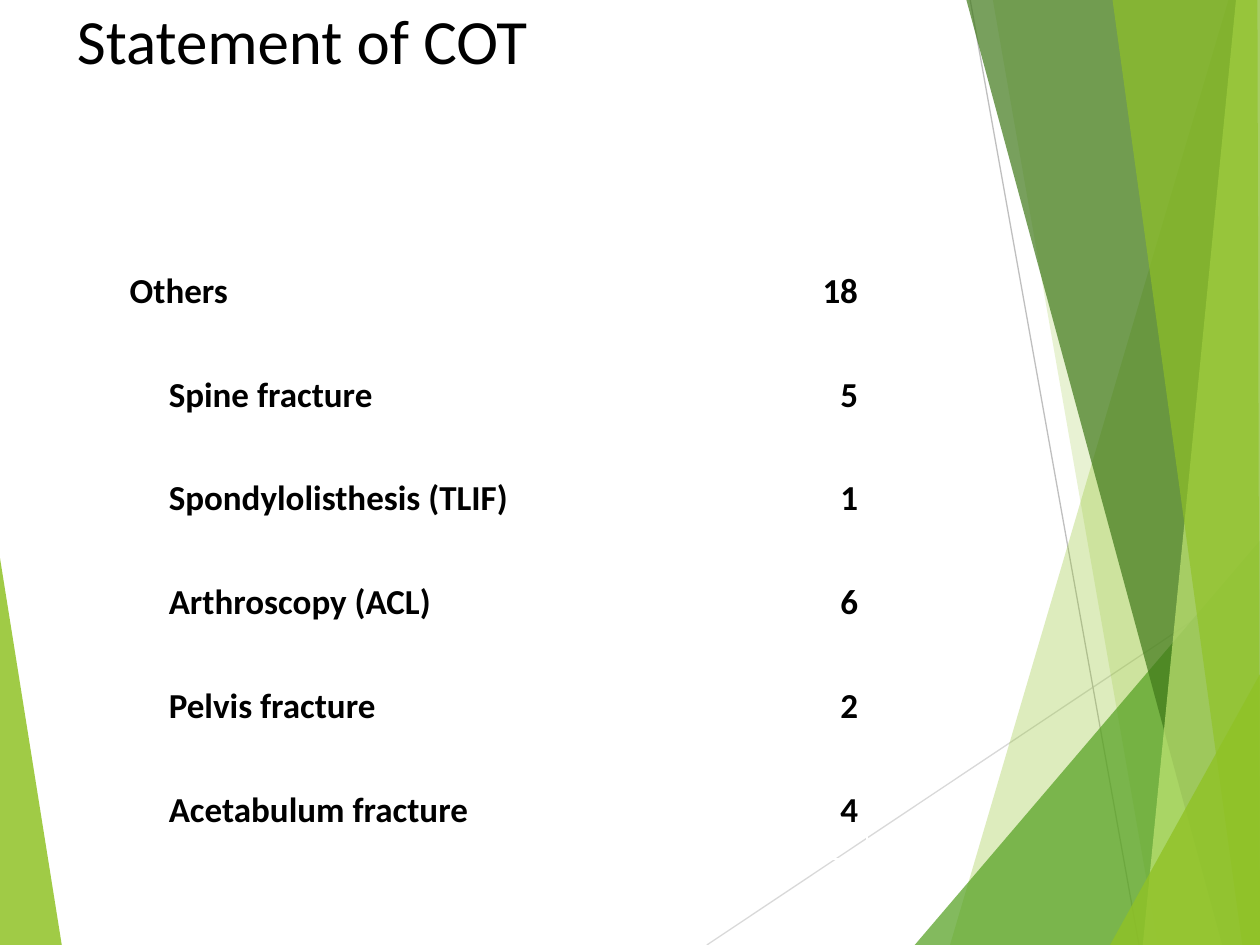
from dataclasses import dataclass

from lxml.etree import SubElement
from pptx import Presentation
from pptx.dml.color import RGBColor
from pptx.enum.shapes import MSO_CONNECTOR
from pptx.enum.text import MSO_ANCHOR, PP_ALIGN
from pptx.oxml import parse_xml
from pptx.oxml.ns import nsdecls, qn
from pptx.util import Inches, Pt


@dataclass(frozen=True)
class Theme:
    font: str = "Calibri"
    ink: str = "000000"
    rule: str = "FFFFFF"
    lime: str = "90C226"
    leaf: str = "54A021"
    moss: str = "3F7819"
    pale: str = "C0E474"
    light: str = "D9D9D9"
    grey: str = "BFBFBF"
    head: int = 36
    body: int = 20


THEME = Theme()
WIDE, HIGH = 10, 7.5

# Corner points, colour and opacity of each facet, from back to front
FACETS = [
    ([(0, 4.43), (0.49, HIGH), (0, HIGH)], THEME.lime, 85),
    ([(9.75, 0), (7.54, HIGH), (WIDE, HIGH), (WIDE, 0)], THEME.lime, 30),
    ([(7.88, 0), (9.19, HIGH), (WIDE, HIGH), (WIDE, 0)], THEME.lime, 20),
    ([(7.26, HIGH), (WIDE, 4.29), (WIDE, HIGH)], THEME.leaf, 72),
    ([(7.67, 0), (9.7, HIGH), (WIDE, HIGH), (WIDE, 0)], THEME.moss, 70),
    ([(9.81, 0), (9.07, HIGH), (WIDE, HIGH), (WIDE, 0)], THEME.pale, 70),
    ([(8.83, 0), (9.86, HIGH), (WIDE, HIGH), (9.98, 0)], THEME.lime, 65),
    ([(8.81, HIGH), (WIDE, 5.35), (WIDE, HIGH)], THEME.lime, 80),
]
RAYS = [
    ((5.61, HIGH), (WIDE, 4.57), THEME.light),
    ((7.7, 0), (9.04, HIGH), THEME.grey),
]
CASES = [
    ("Others", 18),
    ("Spine fracture", 5),
    ("Spondylolisthesis (TLIF)", 1),
    ("Arthroscopy (ACL)", 6),
    ("Pelvis fracture", 2),
    ("Acetabulum fracture", 4),
]


def style(para, size, bold=False):
    for run in para.runs:
        run.font.name = THEME.font
        run.font.size = Pt(size)
        run.font.bold = bold
        run.font.color.rgb = RGBColor.from_string(THEME.ink)


def add_facet(slide, left, top, points, color, alpha):
    spots = [(left + Inches(x), top + Inches(y)) for x, y in points]
    path = slide.shapes.build_freeform(*spots[0])
    path.add_line_segments(spots[1:], close=True)
    shape = path.convert_to_shape()
    shape.shadow.inherit = False
    shape.line.fill.background()
    shape.fill.solid()
    shape.fill.fore_color.rgb = RGBColor.from_string(color)
    tint = shape._element.spPr.find(qn("a:solidFill"))[0]
    SubElement(tint, qn("a:alpha")).set("val", str(alpha * 1000))


def add_ray(slide, left, top, start, end, color):
    ray = slide.shapes.add_connector(
        MSO_CONNECTOR.STRAIGHT,
        left + Inches(start[0]), top + Inches(start[1]),
        left + Inches(end[0]), top + Inches(end[1]))
    ray.line.color.rgb = RGBColor.from_string(color)
    ray.line.width = Pt(0.75)
    SubElement(ray._element.spPr, qn("a:effectLst"))


def add_decor(slide, left, top):
    # The left wedge lies under the rays, the others above
    add_facet(slide, left, top, *FACETS[0])
    for ray in RAYS:
        add_ray(slide, left, top, *ray)
    for facet in FACETS[1:]:
        add_facet(slide, left, top, *facet)


def set_title(slide, left, top, width, height, text):
    title = slide.shapes.title
    title.left, title.top, title.width, title.height = left, top, width, height
    frame = title.text_frame
    frame.text = text
    frame.word_wrap = True
    frame.vertical_anchor = MSO_ANCHOR.TOP
    para = frame.paragraphs[0]
    para.alignment = PP_ALIGN.LEFT
    style(para, THEME.head)
    # Keep the title in front of the facets
    slide.shapes._spTree.append(title._element)


def set_edges(cell, widths):
    for spot, (side, width) in enumerate(widths.items()):
        edge = parse_xml(
            f'<a:ln{side} {nsdecls("a")} w="{Pt(width)}"><a:solidFill>'
            f'<a:srgbClr val="{THEME.rule}"/></a:solidFill></a:ln{side}>')
        cell._tc.get_or_add_tcPr().insert(spot, edge)


def fill_cell(cell, text, align, indent, edges):
    cell.fill.background()
    cell.vertical_anchor = MSO_ANCHOR.MIDDLE
    cell.margin_left = cell.margin_right = Inches(0.07)
    cell.margin_top = cell.margin_bottom = 0
    cell.text_frame.text = text
    para = cell.text_frame.paragraphs[0]
    para.alignment = align
    para.line_spacing = 1.13
    if indent:
        para._p.get_or_add_pPr().set("marL", str(Inches(0.31)))
    style(para, THEME.body, bold=True)
    set_edges(cell, edges)


def add_cases(slide, left, top, width, height):
    table = slide.shapes.add_table(
        len(CASES), 2, left, top, width, height).table
    table.first_row = table.horz_banding = False
    table.columns[0].width = Inches(3.68)
    table.columns[1].width = width - Inches(3.68)
    for row, (name, count) in enumerate(CASES):
        # A heavier rule parts the total from its details
        edges = {"L": 1, "R": 1, "T": 3 if row == 1 else 1,
                 "B": 3 if row == 0 else 1}
        side = PP_ALIGN.JUSTIFY if row else PP_ALIGN.LEFT
        fill_cell(table.cell(row, 0), name, side, row > 0, edges)
        fill_cell(table.cell(row, 1), str(count), PP_ALIGN.RIGHT, False, edges)


def main():
    deck = Presentation()
    deck.slide_width, deck.slide_height = Inches(WIDE), Inches(HIGH)
    slide = deck.slides.add_slide(deck.slide_layouts[5])
    add_decor(slide, Inches(0), Inches(0))
    set_title(slide, Inches(0.51), Inches(-0.04), Inches(9), Inches(1.25),
              "Statement of COT")
    add_cases(slide, Inches(0.96), Inches(1.88), Inches(5.92), Inches(4.94))
    deck.save("out.pptx")


if __name__ == "__main__":
    main()
